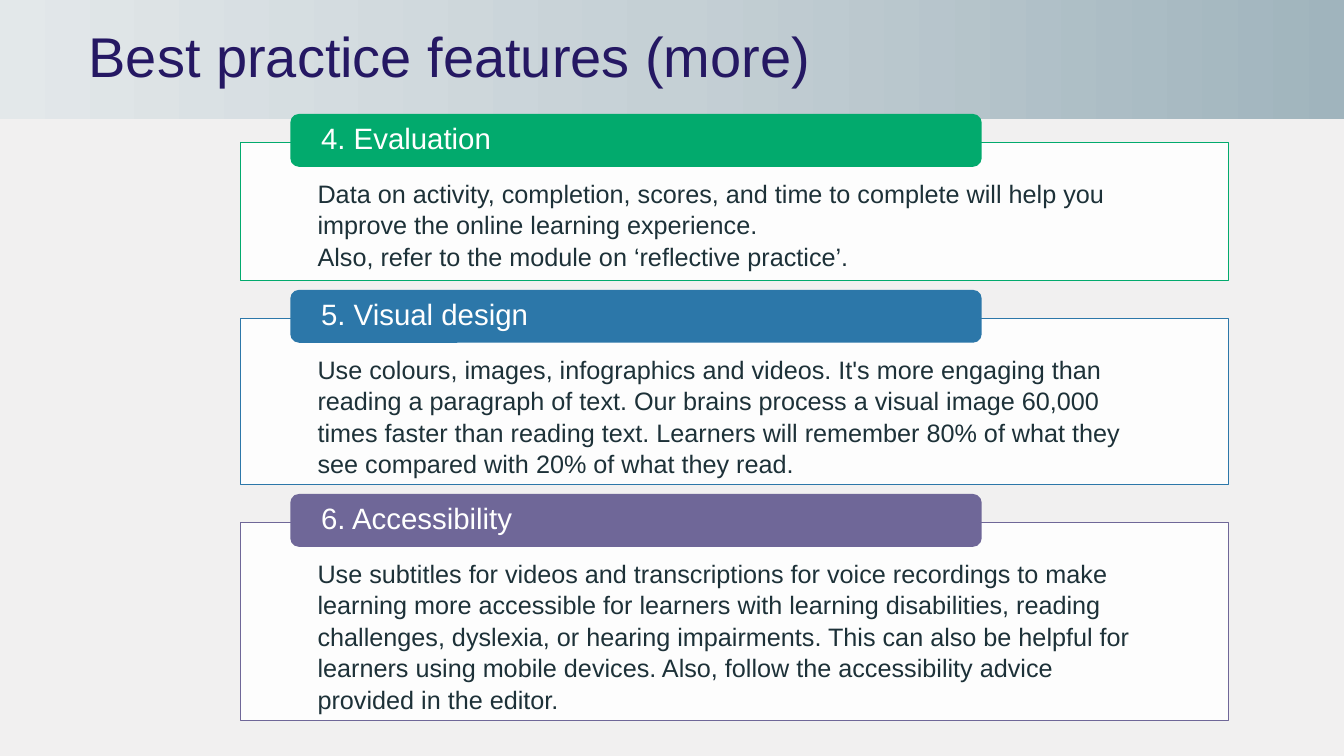
"""Builds the slide on best practice features, with three titled panels."""
from copy import deepcopy

from lxml import etree
from pptx import Presentation, util as u
from pptx.dml import color
from pptx.enum import shapes, text
from pptx.oxml import ns

SLIDE_WIDTH, SLIDE_HEIGHT = u.Inches(13.33), u.Inches(7.5)
PANEL_LEFT, PANEL_WIDTH = 17.93, 73.5
TAB_LEFT, TAB_WIDTH, TAB_HEIGHT, TAB_RISE = 21.6, 51.45, 7, 3.8
FIRST_PANEL_TOP, PANEL_GAP = 18.87, 5

FEATURES = [
    ("4. Evaluation", "02AA6D", 18.27,
     "Data on activity, completion, scores, and time to complete will help you "
     "improve the online learning experience.\v"
     "Also, refer to the module on ‘reflective practice’."),
    ("5. Visual design", "2C77A9", 22,
     "Use colours, images, infographics and videos. It's more engaging than reading "
     "a paragraph of text. Our brains process a visual image 60,000 times faster than "
     "reading text. Learners will remember 80% of what they see compared with 20% of "
     "what they read."),
    ("6. Accessibility", "6F6798", 26.2,
     "Use subtitles for videos and transcriptions for voice recordings to make learning "
     "more accessible for learners with learning disabilities, reading challenges, "
     "dyslexia, or hearing impairments. This can also be helpful for learners using "
     "mobile devices. Also, follow the accessibility advice provided in the editor."),
]


def rgb(code):
    """Return the colour for a hex string."""
    return color.RGBColor.from_string(code)


def across(percent):
    """Return a share of the slide's width."""
    return u.Emu(round(SLIDE_WIDTH * percent / 100))


def down(percent):
    """Return a share of the slide's height."""
    return u.Emu(round(SLIDE_HEIGHT * percent / 100))


def add_block(slide, kind, left, top, width, height, fill=None, outline=None):
    """Add a shape without shadow, placed in percent of the slide."""
    block = slide.shapes.add_shape(
        kind, across(left), down(top), across(width), down(height))
    block.shadow.inherit = False
    if fill:
        block.fill.solid()
        block.fill.fore_color.rgb = rgb(fill)
    if outline:
        block.line.color.rgb = rgb(outline)
        block.line.width = u.Pt(0.75)
    else:
        block.line.fill.background()
    return block


def write(block, words, size, ink, insets, anchor, spacing):
    """Write left-aligned text with insets in percent: side, top, bottom."""
    frame = block.text_frame
    frame.word_wrap = True
    frame.vertical_anchor = anchor
    side, top, bottom = insets
    frame.margin_left = frame.margin_right = across(side)
    frame.margin_top, frame.margin_bottom = down(top), down(bottom)
    frame.text = words
    paragraph = frame.paragraphs[0]
    paragraph.alignment = text.PP_ALIGN.LEFT
    paragraph.line_spacing = spacing
    for run in paragraph.runs:
        run.font.name = "Arial"
        run.font.size = u.Pt(size)
        run.font.color.rgb = rgb(ink)


def shade(block, codes, angle):
    """Fill a shape with an even gradient through the given colours."""
    block.fill.gradient()
    block.fill.gradient_angle = angle
    stop_list = block.fill._fill._gradFill.gsLst
    stop_list.append(deepcopy(stop_list[-1]))
    for place, (stop, code) in enumerate(zip(block.fill.gradient_stops, codes)):
        stop.color.rgb = rgb(code)
        stop.position = place / (len(codes) - 1)


def set_opacity(block, percent):
    """Make the solid fill of a shape partly transparent."""
    fill_color = block._element.spPr.find(ns.qn("a:solidFill"))[0]
    etree.SubElement(fill_color, ns.qn("a:alpha"), val=str(percent * 1000))


def add_heading(slide, words):
    """Add the shaded title band."""
    band = add_block(slide, shapes.MSO_SHAPE.RECTANGLE, 0, 0, 100, 15.73)
    shade(band, ["A0B4BD", "C5D0D5", "E3E8EA"], 180)
    write(band, words, 40, "251863", (6.6, 0.67, 0.67), text.MSO_ANCHOR.MIDDLE, 0.9)


def add_feature(slide, top, title, accent, height, body):
    """Add an outlined panel with a coloured tab over its top edge."""
    panel = add_block(slide, shapes.MSO_SHAPE.RECTANGLE,
                      PANEL_LEFT, top, PANEL_WIDTH, height, "FFFFFF", accent)
    set_opacity(panel, 90)
    write(panel, body, 18, "1D3138", (5.7, 4.53, 1.9), text.MSO_ANCHOR.TOP, 1.04)
    tab = add_block(slide, shapes.MSO_SHAPE.ROUNDED_RECTANGLE,
                    TAB_LEFT, top - TAB_RISE, TAB_WIDTH, TAB_HEIGHT, accent)
    write(tab, title, 21, "FFFFFF", (2.1, 0, 0), text.MSO_ANCHOR.MIDDLE, 0.9)


def main():
    """Build and save the slide."""
    deck = Presentation()
    deck.slide_width, deck.slide_height = SLIDE_WIDTH, SLIDE_HEIGHT
    slide = deck.slides.add_slide(deck.slide_layouts[6])
    slide.background.fill.solid()
    slide.background.fill.fore_color.rgb = rgb("F1F0F0")
    add_heading(slide, "Best practice features (more)")
    top = FIRST_PANEL_TOP
    for title, accent, height, body in FEATURES:
        add_feature(slide, top, title, accent, height, body)
        top += height + PANEL_GAP
    deck.save("out.pptx")


if __name__ == "__main__":
    main()
